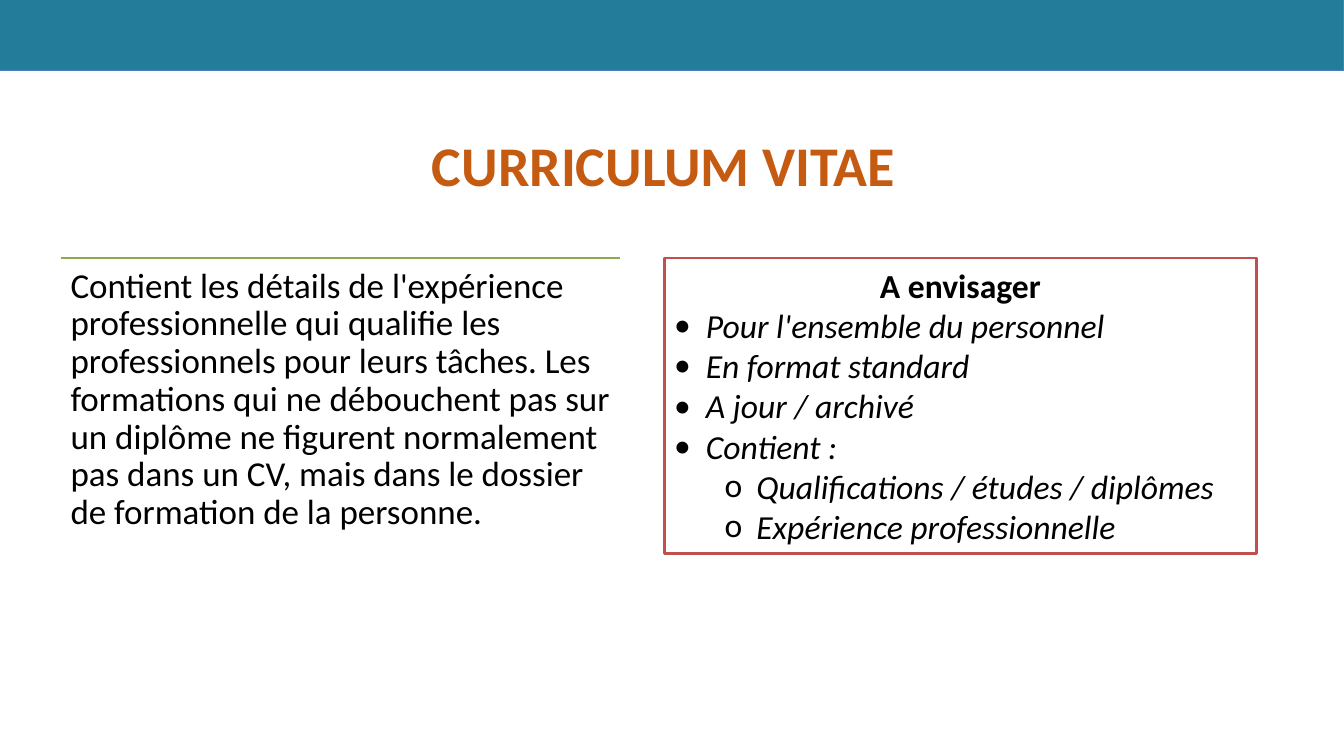
from lxml.etree import SubElement
from pptx import Presentation
from pptx.dml.color import RGBColor
from pptx.enum.shapes import MSO_CONNECTOR as Connector, MSO_SHAPE as Shape
from pptx.enum.text import MSO_ANCHOR as Anchor, MSO_AUTO_SIZE as AutoSize, PP_ALIGN as Align
from pptx.oxml.ns import qn
from pptx.util import Cm, Pt

TEAL = RGBColor(0x23, 0x7C, 0x9A)
BLUE = RGBColor(0x4B, 0x7E, 0xBC)
ORANGE = RGBColor(0xC5, 0x5A, 0x11)
GREEN = RGBColor(0x8D, 0xAA, 0x51)
RED = RGBColor(0xC0, 0x50, 0x4D)
BLACK = RGBColor(0, 0, 0)
WHITE = RGBColor(0xFF, 0xFF, 0xFF)
FONT = "Calibri"
HANGING = Cm(0.8)
LEVEL_STEP = Cm(1.27)
COLUMN_TOP = 6.5

DEFINITION = (
    "Contient les détails de l'expérience professionnelle qui qualifie les "
    "professionnels pour leurs tâches. Les formations qui ne débouchent pas sur "
    "un diplôme ne figurent normalement pas dans un CV, mais dans le dossier de "
    "formation de la personne."
)
CHECKLIST = [
    ("Pour l'ensemble du personnel", 0),
    ("En format standard", 0),
    ("A jour / archivé", 0),
    ("Contient :", 0),
    ("Qualifications / études / diplômes", 1),
    ("Expérience professionnelle", 1),
]


def write(paragraph, text, size=24, color=BLACK, bold=False, italic=False,
          align=Align.LEFT, spacing=1.0, bullet=None, level=0):
    """Fill a paragraph with formatted text and an optional bullet."""
    paragraph.alignment = align
    paragraph.line_spacing = spacing
    paragraph.space_before = paragraph.space_after = Pt(0)
    paragraph.level = level
    if bullet:
        properties = paragraph._p.get_or_add_pPr()
        properties.set("marL", str(HANGING + level * LEVEL_STEP))
        properties.set("indent", str(-HANGING))
        SubElement(properties, qn("a:buFont"), typeface=FONT)
        SubElement(properties, qn("a:buChar"), char=bullet)
    run = paragraph.add_run()
    run.text = text
    run.font.name = FONT
    run.font.size = Pt(size)
    run.font.color.rgb = color
    run.font.bold = bold
    run.font.italic = italic


def set_frame(frame, top, bottom, anchor=Anchor.TOP):
    """Wrap a text frame and set its insets and anchor."""
    frame.word_wrap = True
    frame.auto_size = AutoSize.NONE
    frame.margin_left = frame.margin_right = Cm(0.25)
    frame.margin_top, frame.margin_bottom = Cm(top), Cm(bottom)
    frame.vertical_anchor = anchor


def add_panel(slide, box, fill, outline, width):
    """Add a flat rectangle in the given box."""
    panel = slide.shapes.add_shape(Shape.RECTANGLE, *box)
    panel.shadow.inherit = False
    panel.fill.solid()
    panel.fill.fore_color.rgb = fill
    panel.line.color.rgb = outline
    panel.line.width = Pt(width)
    return panel


def add_heading(slide, box):
    """Place the slide title in the given box."""
    heading = slide.shapes.title
    heading.left, heading.top, heading.width, heading.height = box
    set_frame(heading.text_frame, 0.13, 0)
    write(heading.text_frame.paragraphs[0], "CURRICULUM VITAE", size=40,
          color=ORANGE, bold=True, align=Align.CENTER)


def add_definition(slide, box):
    """Place the definition under a rule along the top of the box."""
    left, top, width, height = box
    rule = slide.shapes.add_connector(Connector.STRAIGHT, left, top, left + width, top)
    rule.line.color.rgb = GREEN
    rule.line.width = Pt(2)
    SubElement(rule._element.spPr, qn("a:effectLst"))
    definition = slide.shapes.add_textbox(left, top, width, height)
    set_frame(definition.text_frame, 0.25, 0.25)
    write(definition.text_frame.paragraphs[0], DEFINITION, size=25, spacing=0.9)


def add_checklist(slide, box):
    """Place the outlined checklist with its heading and two bullet levels."""
    frame = add_panel(slide, box, WHITE, RED, 2).text_frame
    set_frame(frame, 0.13, 0.13, Anchor.MIDDLE)
    write(frame.paragraphs[0], "A envisager", bold=True, align=Align.CENTER)
    for text, level in CHECKLIST:
        write(frame.add_paragraph(), text, italic=True, bullet="•o"[level], level=level)


def main():
    """Build the slide and save it."""
    deck = Presentation()
    deck.slide_width, deck.slide_height = Cm(33.87), Cm(19.05)
    slide = deck.slides.add_slide(deck.slide_layouts[5])
    add_panel(slide, (0, 0, deck.slide_width, Cm(1.78)), TEAL, BLUE, 0.75)
    add_heading(slide, (Cm(0.91), Cm(3.15), Cm(31.62), Cm(1.63)))
    add_definition(slide, (Cm(1.53), Cm(COLUMN_TOP), Cm(14.1), Cm(6.93)))
    add_checklist(slide, (Cm(16.74), Cm(COLUMN_TOP), Cm(14.93), Cm(7.44)))
    deck.save("out.pptx")


if __name__ == "__main__":
    main()
